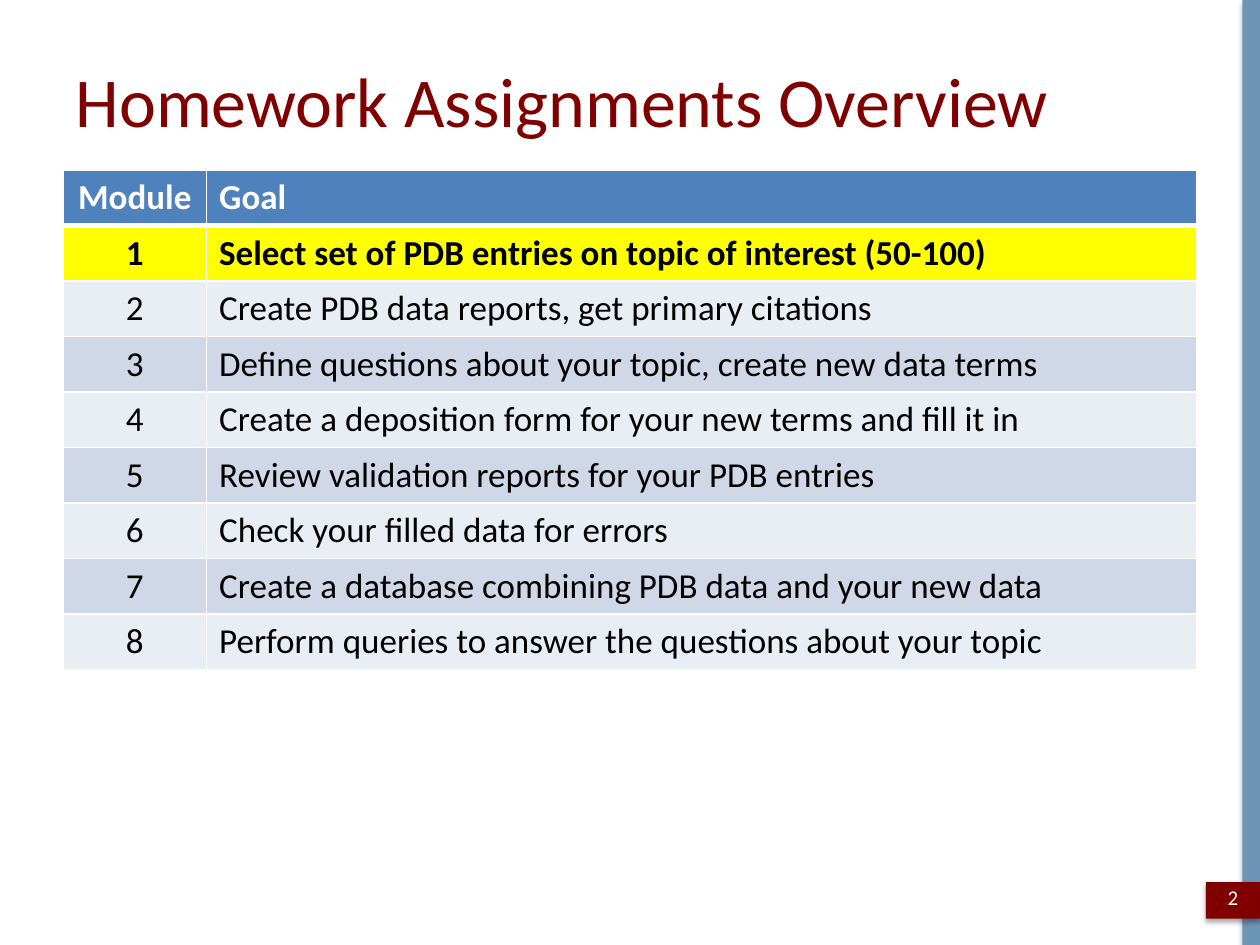
from lxml.etree import SubElement
from pptx import Presentation
from pptx.dml.color import RGBColor
from pptx.enum.shapes import MSO_SHAPE
from pptx.enum.text import MSO_ANCHOR, PP_ALIGN
from pptx.oxml.ns import qn
from pptx.util import Inches, Pt

WIDTH, HEIGHT = 10, 7.5
MARGIN = 0.5
COLUMN_WIDTHS = (1.14, 7.86)
ROW_HEIGHT = 0.44
WHITE, BLACK, MAROON = "FFFFFF", "000000", "800000"
HEADER_BLUE, HIGHLIGHT = "4F81BD", "FFFF00"
BANDS = ("E9EDF4", "D0D8E8")

GOALS = (
    "Select set of PDB entries on topic of interest (50-100)",
    "Create PDB data reports, get primary citations",
    "Define questions about your topic, create new data terms",
    "Create a deposition form for your new terms and fill it in",
    "Review validation reports for your PDB entries",
    "Check your filled data for errors",
    "Create a database combining PDB data and your new data",
    "Perform queries to answer the questions about your topic",
)


def paint(color_format, value):
    color_format.rgb = RGBColor.from_string(value)


def place(shape, left, top, width, height):
    shape.left, shape.top = Inches(left), Inches(top)
    shape.width, shape.height = Inches(width), Inches(height)


def write(frame, text, size, color, bold=False, align=PP_ALIGN.LEFT):
    para = frame.paragraphs[0]
    para.alignment = align
    span = para.add_run()
    span.text = text
    span.font.name = "Calibri"
    span.font.size = Pt(size)
    span.font.bold = bold
    paint(span.font.color, color)


def add_shadow(shape):
    effects = SubElement(shape._element.spPr, qn("a:effectLst"))
    shadow = SubElement(effects, qn("a:outerShdw"), blurRad=str(Pt(3.1)),
                        dist=str(Pt(1.8)), dir="5400000", rotWithShape="0")
    color = SubElement(shadow, qn("a:srgbClr"), val=BLACK)
    SubElement(color, qn("a:alpha"), val="35000")


def add_bar(page, left, top, width, height, color):
    bar = page.shapes.add_shape(MSO_SHAPE.RECTANGLE, 0, 0, 0, 0)
    place(bar, left, top, width, height)
    bar.fill.solid()
    paint(bar.fill.fore_color, color)
    bar.line.fill.background()
    add_shadow(bar)


def add_borders(cell, top, bottom):
    properties = cell._tc.get_or_add_tcPr()
    # Borders come before the fill in the cell properties
    for index, (side, points) in enumerate(
            (("L", 1), ("R", 1), ("T", top), ("B", bottom))):
        line = SubElement(properties, qn(f"a:ln{side}"), w=str(Pt(points)))
        fill = SubElement(line, qn("a:solidFill"))
        SubElement(fill, qn("a:srgbClr"), val=WHITE)
        properties.insert(index, line)


def row_style(row):
    """Return fill, text colour and boldness of a table row."""
    if row == 0:
        return HEADER_BLUE, WHITE, True
    if row == 1:
        return HIGHLIGHT, BLACK, True
    return BANDS[row % 2], BLACK, False


def add_goal_table(page, left, top):
    rows = [("Module", "Goal")]
    rows += [(str(number), goal) for number, goal in enumerate(GOALS, 1)]
    table = page.shapes.add_table(
        len(rows), len(COLUMN_WIDTHS), Inches(left), Inches(top),
        Inches(sum(COLUMN_WIDTHS)), Inches(ROW_HEIGHT * len(rows))).table
    for column, width in zip(table.columns, COLUMN_WIDTHS):
        column.width = Inches(width)
    for r, texts in enumerate(rows):
        fill, color, bold = row_style(r)
        for c, text in enumerate(texts):
            cell = table.cell(r, c)
            cell.fill.solid()
            paint(cell.fill.fore_color, fill)
            add_borders(cell, 3 if r == 1 else 1, 3 if r == 0 else 1)
            align = PP_ALIGN.LEFT if c else PP_ALIGN.CENTER
            write(cell.text_frame, text, 20, color, bold, align)


def add_title(page, text):
    title = page.shapes.title
    place(title, MARGIN, 0.3, WIDTH - 2 * MARGIN, 0.98)
    title.text_frame.vertical_anchor = MSO_ANCHOR.MIDDLE
    write(title.text_frame, text, 40, MAROON)


def add_page_number(page, number, left):
    box = page.shapes.add_textbox(0, 0, 0, 0)
    place(box, left, 6.92, WIDTH - left, 0.4)
    box.text_frame.word_wrap = True
    box.text_frame.vertical_anchor = MSO_ANCHOR.MIDDLE
    write(box.text_frame, number, 12, WHITE, align=PP_ALIGN.CENTER)


def main():
    deck = Presentation()
    deck.slide_width, deck.slide_height = Inches(WIDTH), Inches(HEIGHT)
    page = deck.slides.add_slide(deck.slide_layouts[5])

    # Side stripe and page number tab
    tab_left = 9.57
    add_bar(page, 9.86, 0, 0.14, HEIGHT, "6C95B6")
    add_bar(page, tab_left, 7, WIDTH - tab_left, 0.29, MAROON)

    # Title, table and page number
    add_title(page, "Homework Assignments Overview")
    add_goal_table(page, MARGIN, 1.35)
    add_page_number(page, "2", tab_left)
    deck.save("out.pptx")


if __name__ == "__main__":
    main()
